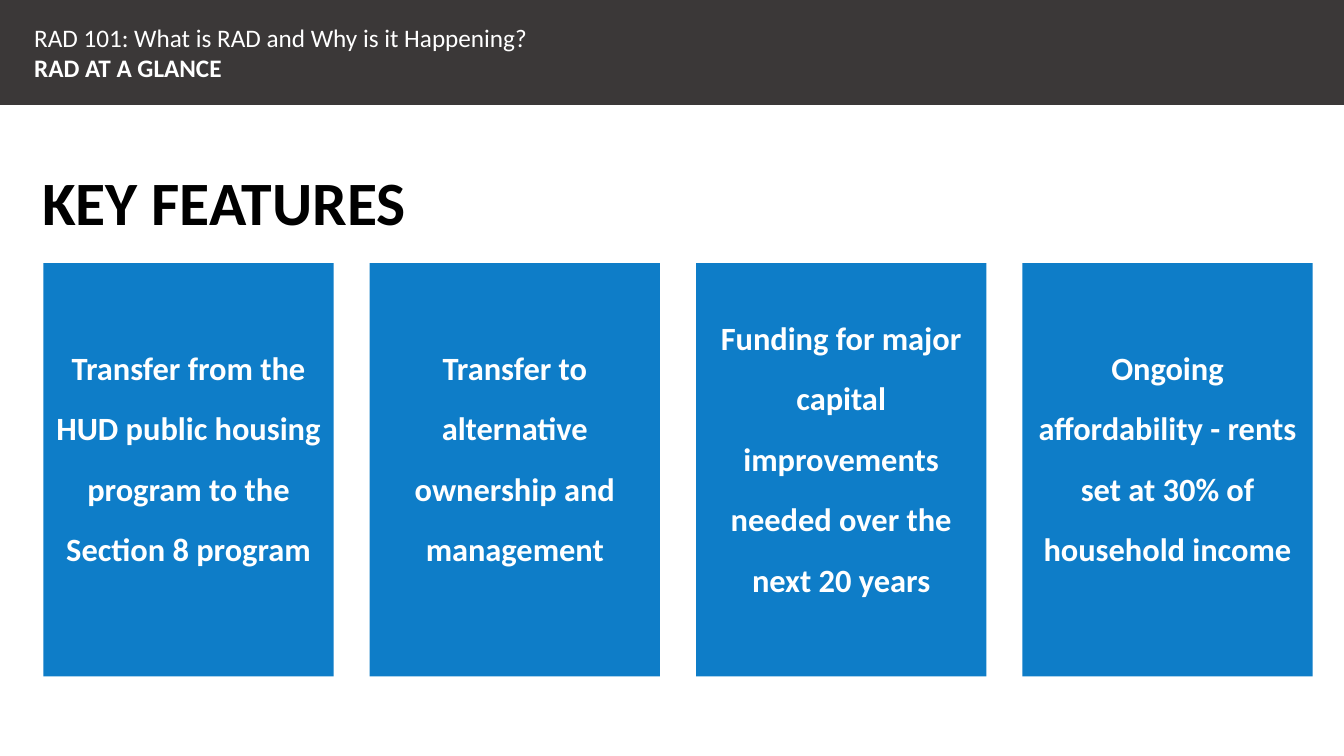
import pptx
import pptx.util
import pptx.dml.color
import pptx.enum.shapes
import pptx.enum.text

WHITE = pptx.dml.color.RGBColor(0xFF, 0xFF, 0xFF)
BLACK = pptx.dml.color.RGBColor(0x00, 0x00, 0x00)
GRAY = pptx.dml.color.RGBColor(0x3B, 0x38, 0x38)
BLUE = pptx.dml.color.RGBColor(0x0E, 0x7D, 0xC8)

ALIGN = pptx.enum.text.PP_ALIGN
CARDS = [
    "Transfer from the HUD public housing program to the Section 8 program",
    "Transfer to alternative ownership and management",
    "Funding for major capital improvements needed over the next 20 years",
    "Ongoing affordability - rents set at 30% of household income",
]


class Deck:
    face = "Calibri"

    def __init__(self):
        self.show = pptx.Presentation()
        self.show.slide_width = pptx.util.Inches(13.33)
        self.show.slide_height = pptx.util.Inches(7.5)
        self.slide = self.show.slides.add_slide(self.show.slide_layouts[6])

    def place(self, left, top, width, height):
        wide, high = self.show.slide_width, self.show.slide_height
        return [int(share * side / 100) for share, side in
                zip((left, top, width, height), (wide, high, wide, high))]

    def block(self, area, fill):
        rect = pptx.enum.shapes.MSO_SHAPE.RECTANGLE
        shape = self.slide.shapes.add_shape(rect, *self.place(*area))
        shape.shadow.inherit = False
        shape.fill.solid()
        shape.fill.fore_color.rgb = fill
        shape.line.fill.background()
        return shape

    def label(self, area):
        return self.slide.shapes.add_textbox(*self.place(*area))

    def letter(self, shape, lines, size, color, layout, raised=0):
        frame = shape.text_frame
        frame.word_wrap = True
        frame.vertical_anchor = pptx.enum.text.MSO_ANCHOR.MIDDLE
        for row, (text, bold) in enumerate(lines):
            para = frame.add_paragraph() if row else frame.paragraphs[0]
            for name, value in layout.items():
                setattr(para, name, value)
            run = para.add_run()
            run.text = text
            style = {"name": self.face, "size": pptx.util.Pt(size), "bold": bold}
            for name, value in style.items():
                setattr(run.font, name, value)
            run.font.color.rgb = color
            if raised:
                run._r.get_or_add_rPr().set("baseline", str(raised * 1000))


def main():
    deck = Deck()
    title = deck.label((2.4, 22.67, 86.27, 9.73))
    deck.letter(title, [("KEY FEATURES", True)], 44, BLACK,
                {"alignment": ALIGN.LEFT, "line_spacing": 0.8})

    deck.block((0, 0, 100, 13.87), GRAY)
    for col, text in enumerate(CARDS):
        card = deck.block((3.23 + col * 24.28, 34.8, 21.6, 54.67), BLUE)
        deck.letter(card, [(text, True)], 40, WHITE,
                    {"alignment": ALIGN.CENTER, "line_spacing": 0.9}, raised=30)

    head = deck.label((1.8, 0, 86.27, 13.87))
    deck.letter(head, [("RAD 101: What is RAD and Why is it Happening?", False),
                       ("RAD AT A GLANCE", True)], 18, WHITE,
                {"alignment": ALIGN.LEFT})
    deck.show.save("out.pptx")


if __name__ == "__main__":
    main()
